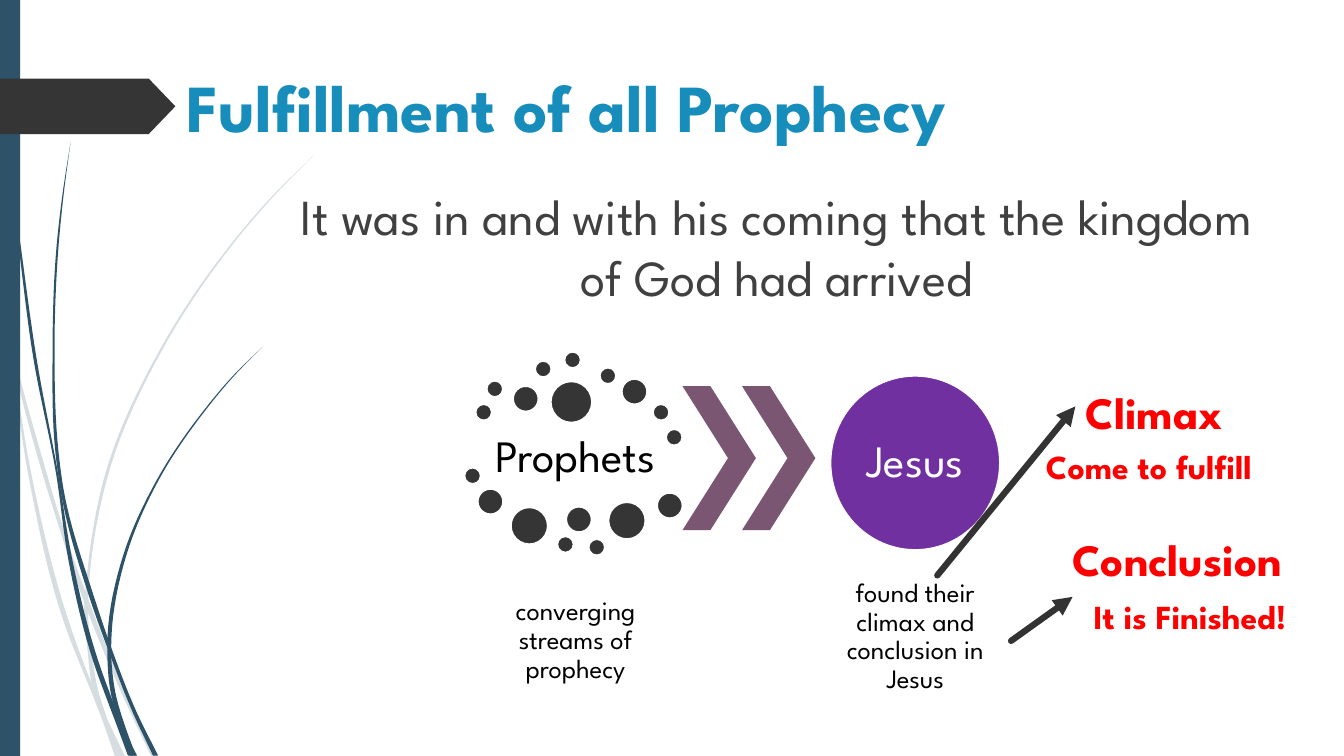
from dataclasses import dataclass
from itertools import pairwise
from math import dist

from lxml.etree import SubElement
from pptx import Presentation
from pptx.dml.color import RGBColor
from pptx.enum.shapes import MSO_CONNECTOR, MSO_SHAPE
from pptx.enum.text import MSO_ANCHOR, PP_ALIGN
from pptx.oxml.ns import qn
from pptx.shapes.autoshape import Shape
from pptx.shapes.shapetree import SlideShapes
from pptx.text.text import TextFrame
from pptx.util import Cm, Pt

FONT = "League Spartan"
WHITE = RGBColor(0xFF, 0xFF, 0xFF)
BLACK = RGBColor(0x00, 0x00, 0x00)
NAVY = RGBColor(0x2E, 0x53, 0x69)
PALE_NAVY = RGBColor(0xD5, 0xDD, 0xE1)
CHARCOAL = RGBColor(0x35, 0x35, 0x35)
ARROW_GREY = RGBColor(0x33, 0x33, 0x33)
BODY_GREY = RGBColor(0x40, 0x40, 0x40)
TITLE_BLUE = RGBColor(0x17, 0x8D, 0xBB)
PLUM = RGBColor(0x7A, 0x56, 0x73)
PURPLE = RGBColor(0x70, 0x30, 0xA0)
RED = RGBColor(0xFF, 0x00, 0x00)

Knot = tuple[float, float, float]


@dataclass(frozen=True)
class Box:
    left: float
    top: float
    width: float
    height: float

    def lengths(self) -> tuple[Cm, Cm, Cm, Cm]:
        return Cm(self.left), Cm(self.top), Cm(self.width), Cm(self.height)


@dataclass(frozen=True)
class TextStyle:
    size: int
    color: RGBColor
    bold: bool = False
    align: PP_ALIGN = PP_ALIGN.LEFT
    anchor: MSO_ANCHOR = MSO_ANCHOR.TOP
    line_spacing: float = 1.0
    inset: float | None = None


@dataclass(frozen=True)
class Label:
    text: str
    box: Box
    style: TextStyle


@dataclass(frozen=True)
class Blade:
    """A grass blade: knots of x, y and width, from tip to root."""
    color: RGBColor
    knots: list[Knot]


@dataclass(frozen=True)
class Arrow:
    start: tuple[float, float]
    end: tuple[float, float]


@dataclass(frozen=True)
class DotGroup:
    diameter: float
    centers: list[tuple[float, float]]


TITLE = TextStyle(48, TITLE_BLUE, bold=True, anchor=MSO_ANCHOR.MIDDLE)
BODY = TextStyle(36, BODY_GREY, align=PP_ALIGN.CENTER)
CAPTION = TextStyle(19, BLACK, False, PP_ALIGN.CENTER, MSO_ANCHOR.MIDDLE, 0.9, 0.08)
PROPHETS = TextStyle(32, BLACK, False, PP_ALIGN.CENTER, MSO_ANCHOR.MIDDLE, 0.9, 0.1)
JESUS = TextStyle(32, WHITE, False, PP_ALIGN.CENTER, MSO_ANCHOR.MIDDLE, 0.9, 0.1)
OUTCOME = TextStyle(32, RED, bold=True)
SAYING = TextStyle(24, RED, bold=True)

BLADES = [
    Blade(PALE_NAVY, [
        (0, 7.37, 0.1), (0.23, 8.38, 0.08), (0.38, 9.14, 0.08), (0.97, 11.4, 0.11),
        (1.52, 13.23, 0.1), (2.18, 15.16, 0.13), (3.18, 17.6, 0.11), (3.87, 19.05, 0.13)]),
    Blade(PALE_NAVY, [
        (0.28, 8.89, 0.03), (0.75, 11.94, 0.08), (1.7, 15.75, 0.13),
        (2.39, 17.53, 0.1), (2.62, 18.08, 0.13), (3.02, 19.05, 0.25)]),
    Blade(PALE_NAVY, [
        (7.92, 3.9, 0), (6.81, 5.02, 0.04), (5.8, 6.21, 0.05), (4.04, 8.85, 0.06),
        (2.76, 11.72, 0.08), (2.2, 14.83, 0.08), (2.17, 15.37, 0.1), (2.26, 16.41, 0.1),
        (2.41, 17.4, 0.13), (2.64, 18.08, 0.1)]),
    Blade(NAVY, [
        (0.46, 5.92, 0.05), (0.88, 9.02, 0.08), (1.44, 11.94, 0.05), (1.78, 14.14, 0.1),
        (2.43, 16.71, 0.13), (2.79, 17.7, 0.13), (3.02, 18.31, 0.13), (3.34, 19.04, 0.23)]),
    Blade(NAVY, [
        (1.78, 3.58, 0), (1.59, 4.9, 0.03), (1.45, 6.22, 0.05), (1.35, 8.86, 0.05),
        (1.44, 11.43, 0.08), (1.56, 12.32, 0.08), (2.3, 15.01, 0.12), (2.74, 16.28, 0.1),
        (3.4, 17.96, 0.1), (3.92, 19.04, 0.13)]),
    Blade(NAVY, [
        (6.62, 8.74, 0), (5.87, 9.49, 0.03), (5.19, 10.3, 0.04), (3.99, 12.07, 0.05),
        (3.14, 14.01, 0.08), (2.76, 16.05, 0.1), (2.76, 16.64, 0.1), (2.87, 17.55, 0.12),
        (3.09, 18.26, 0.1), (3.35, 19.04, 0.15)]),
]
DOT_GROUPS = [
    DotGroup(0.41, [
        (12.19, 10.39), (12.47, 9.8), (13.69, 9.3), (14.43, 9.07), (15.32, 9.47),
        (16.66, 10.39), (16.99, 11.02), (11.91, 11.99), (14.25, 13.72), (15.04, 13.79)]),
    DotGroup(0.64, [
        (13.25, 10.05), (15.99, 9.87), (12.36, 12.64), (14.59, 13.09), (16.88, 12.74)]),
    DotGroup(0.93, [(13.34, 13.25), (15.8, 13.12)]),
    DotGroup(1.04, [(14.4, 10.13)]),
]
LABELS = [
    Label("It was in and with his coming that the kingdom of God had arrived",
          Box(7.19, 4.55, 24.77, 3.56), BODY),
    Label("Prophets", Box(11.99, 10.69, 5.03, 1.7), PROPHETS),
    Label("converging streams of prophecy", Box(11.99, 14.55, 5.03, 3.2), CAPTION),
    Label("found their climax and conclusion in Jesus", Box(20.55, 14.45, 5.03, 3.2), CAPTION),
    Label("Climax", Box(27.1, 9.58, 4.42, 1.63), OUTCOME),
    Label("Come to fulfill", Box(26.11, 11.1, 6.17, 1.27), SAYING),
    Label("Conclusion", Box(26.77, 13.28, 6.71, 1.63), OUTCOME),
    Label("It is Finished!", Box(27.31, 14.88, 5.64, 1.27), SAYING),
]
ARROWS = [Arrow((25.48, 16.15), (27.03, 15.04)), Arrow((23.62, 14.5), (27.1, 10.24))]


def write_text(frame: TextFrame, text: str, style: TextStyle) -> None:
    frame.text = text
    frame.word_wrap = True
    frame.vertical_anchor = style.anchor
    if style.inset is not None:
        frame.margin_left = frame.margin_right = Cm(style.inset)
        frame.margin_top = frame.margin_bottom = Cm(style.inset)
    paragraph = frame.paragraphs[0]
    paragraph.alignment = style.align
    paragraph.line_spacing = style.line_spacing
    font = paragraph.font
    font.name, font.size, font.bold = FONT, Pt(style.size), style.bold
    font.color.rgb = style.color


def paint(shape: Shape, fill: RGBColor, outline: RGBColor | None = None) -> None:
    shape.shadow.inherit = False
    shape.fill.solid()
    shape.fill.fore_color.rgb = fill
    if outline is None:
        shape.line.fill.background()
    else:
        shape.line.color.rgb = outline
        shape.line.width = Pt(1.25)


def add_preset(shapes: SlideShapes, kind: MSO_SHAPE, box: Box, fill: RGBColor,
               outline: RGBColor | None = None) -> Shape:
    shape = shapes.add_shape(kind, *box.lengths())
    paint(shape, fill, outline)
    return shape


def smooth(knots: list[Knot], steps: int = 8) -> list[Knot]:
    """Pass a Hermite curve through the knots, with tangents weighted by chord length."""
    chords = [dist(a, b) for a, b in pairwise(knots)]
    slopes = [tuple((q - p) / chord for p, q in zip(a, b))
              for (a, b), chord in zip(pairwise(knots), chords)]
    inner = [tuple((after * s + before * r) / (before + after) for s, r in zip(*pair))
             for (before, after), pair in zip(pairwise(chords), pairwise(slopes))]
    tangents = [slopes[0], *inner, slopes[-1]]
    curve = [
        tuple(p + (q - p) * t**2 * (3 - 2 * t)
              + chord * t * (1 - t) * (m * (1 - t) - n * t)
              for p, q, m, n in zip(a, b, *ends))
        for (a, b), ends, chord in zip(pairwise(knots), pairwise(tangents), chords)
        for t in (step / steps for step in range(steps))
    ]
    return [*curve, knots[-1]]


def add_blade(shapes: SlideShapes, blade: Blade) -> None:
    curve = smooth(blade.knots)
    left_edge = [(Cm(x - width / 2), Cm(y)) for x, y, width in curve]
    right_edge = [(Cm(x + width / 2), Cm(y)) for x, y, width in curve]
    outline = left_edge + right_edge[::-1]
    builder = shapes.build_freeform(*outline[0])
    builder.add_line_segments(outline[1:], close=True)
    paint(builder.convert_to_shape(), blade.color)


def add_arrow(shapes: SlideShapes, arrow: Arrow) -> None:
    ends = [Cm(value) for value in (*arrow.start, *arrow.end)]
    connector = shapes.add_connector(MSO_CONNECTOR.STRAIGHT, *ends)
    connector.line.color.rgb = ARROW_GREY
    connector.line.width = Pt(4.5)
    line = connector.line._get_or_add_ln()
    line.set("cap", "rnd")
    SubElement(line, qn("a:tailEnd"), type="triangle")
    SubElement(connector._element.spPr, qn("a:effectLst"))


def main() -> None:
    deck = Presentation()
    deck.slide_width, deck.slide_height = Cm(33.87), Cm(19.05)
    slide = deck.slides.add_slide(deck.slide_layouts[5])
    shapes = slide.shapes

    for blade in BLADES:
        add_blade(shapes, blade)
    add_preset(shapes, MSO_SHAPE.RECTANGLE, Box(0, 0, 0.51, 19.05), NAVY)
    title_tag = add_preset(shapes, MSO_SHAPE.PENTAGON, Box(0, 1.98, 4.42, 1.4), CHARCOAL)
    title_tag.adjustments[0] = 0.48

    title = shapes.title
    title.left, title.top, title.width, title.height = Box(4.45, 1.5, 24.77, 2.31).lengths()
    write_text(title.text_frame, "Fulfillment of all Prophecy", TITLE)

    for group in DOT_GROUPS:
        size = group.diameter
        for x, y in group.centers:
            dot = Box(x - size / 2, y - size / 2, size, size)
            add_preset(shapes, MSO_SHAPE.OVAL, dot, CHARCOAL, WHITE)
    for index in range(2):
        chevron_box = Box(17.2 + 1.5 * index, 9.73, 1.85, 3.63)
        chevron = add_preset(shapes, MSO_SHAPE.CHEVRON, chevron_box, PLUM)
        chevron.adjustments[0] = 0.62
    jesus = add_preset(shapes, MSO_SHAPE.OVAL, Box(20.93, 9.47, 4.27, 4.39), PURPLE, WHITE)
    write_text(jesus.text_frame, "Jesus", JESUS)

    for arrow in ARROWS:
        add_arrow(shapes, arrow)
    for label in LABELS:
        write_text(shapes.add_textbox(*label.box.lengths()).text_frame, label.text, label.style)
    deck.save("out.pptx")


if __name__ == "__main__":
    main()
